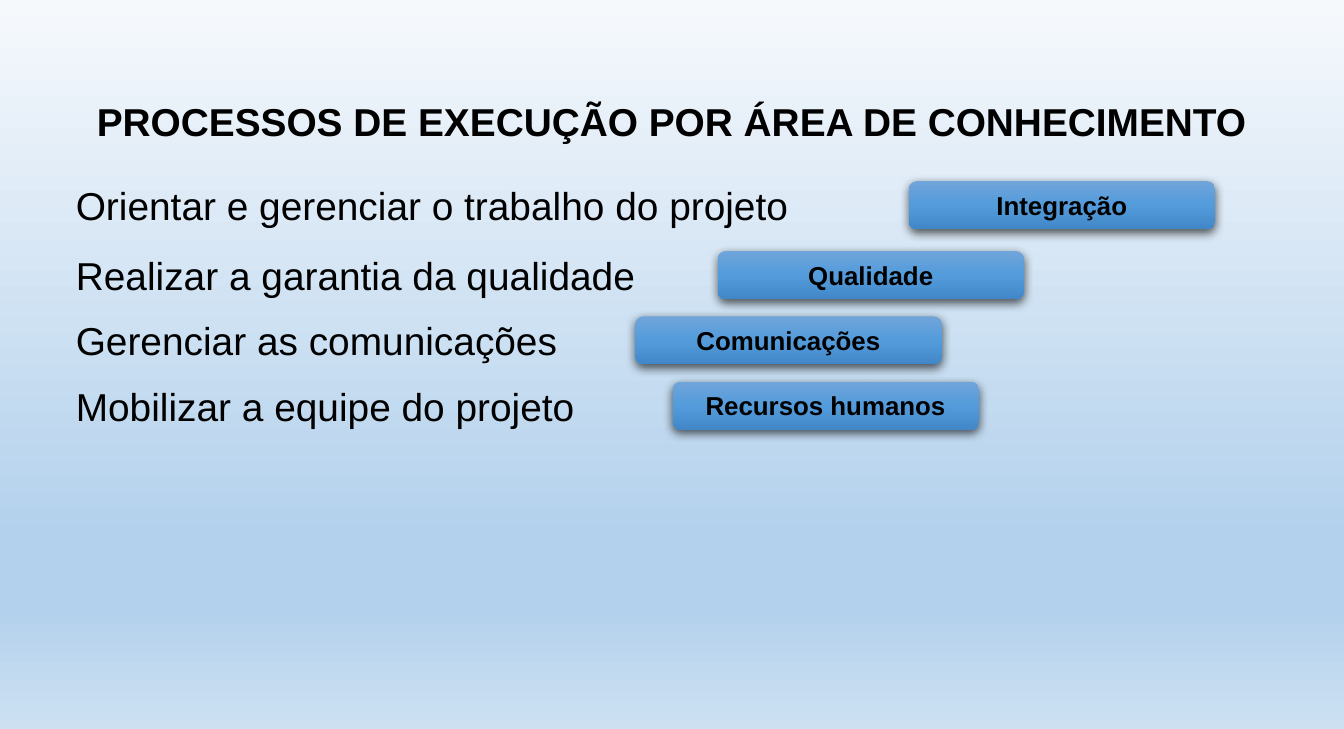
from lxml import etree
from pptx import Presentation
from pptx.dml.color import RGBColor
from pptx.enum.shapes import MSO_SHAPE
from pptx.enum.text import MSO_ANCHOR, PP_ALIGN
from pptx.oxml.ns import qn
from pptx.util import Inches, Pt

# Content
TITLE = "PROCESSOS DE EXECUÇÃO POR ÁREA DE CONHECIMENTO"
ROWS = [  # process, area, row top, tag left
    ("Orientar e gerenciar o trabalho do projeto", "Integração", 1.12, 5.85),
    ("Realizar a garantia da qualidade", "Qualidade", 1.57, 4.62),
    ("Gerenciar as comunicações", "Comunicações", 1.99, 4.09),
    ("Mobilizar a equipe do projeto", "Recursos humanos", 2.41, 4.33),
]

# Style
FONT = "Arial"
BLACK = RGBColor(0, 0, 0)
SKY = [
    (0, RGBColor(0xF6, 0xF9, 0xFC)),
    (74, RGBColor(0xB3, 0xD1, 0xEC)),
    (83, RGBColor(0xB3, 0xD1, 0xEC)),
    (100, RGBColor(0xCC, 0xE0, 0xF2)),
]
BLUE = [
    (0, RGBColor(0x70, 0xA5, 0xDA)),
    (50, RGBColor(0x53, 0x9B, 0xDB)),
    (100, RGBColor(0x42, 0x88, 0xC8)),
]
LEFT, WIDTH, HEIGHT = 0.39, 7.87, 0.4
TAG_W, TAG_H = 1.97, 0.31
TAG_DROP = (HEIGHT - TAG_H) / 2
LEFT_AL, CENTER = PP_ALIGN.LEFT, PP_ALIGN.CENTER
MIDDLE = MSO_ANCHOR.MIDDLE
ROUND = MSO_SHAPE.ROUNDED_RECTANGLE


def add_color(parent, color):
    return etree.SubElement(parent, qn("a:srgbClr"), val=str(color))


def shade(fill, root, stops):
    """Fill from top to bottom with any number of stops."""
    fill.gradient()
    fill.gradient_angle = 270
    group = root.find(".//" + qn("a:gsLst"))
    for old in list(group):
        group.remove(old)
    for pos, color in stops:
        add_color(etree.SubElement(group, qn("a:gs"), pos=str(pos * 1000)), color)


def drop_shadow(shape):
    shape.shadow.inherit = False
    effects = shape._element.spPr.find(qn("a:effectLst"))
    outer = etree.SubElement(
        effects, qn("a:outerShdw"), blurRad=str(Pt(4.5)), dist=str(Pt(1.5)),
        dir="5400000", algn="ctr", rotWithShape="0")
    etree.SubElement(add_color(outer, BLACK), qn("a:alpha"), val="63000")


def write(shape, text, size, bold, align):
    frame = shape.text_frame
    frame.word_wrap = True
    para = frame.paragraphs[0]
    para.text = text
    para.alignment = align
    font = para.font
    font.name, font.size, font.bold = FONT, Pt(size), bold
    font.color.rgb = BLACK


def add_line(slide, text, top, bold=False, align=LEFT_AL):
    box = slide.shapes.add_textbox(
        Inches(LEFT), Inches(top), Inches(WIDTH), Inches(HEIGHT))
    write(box, text, 18, bold, align)


def add_tag(slide, text, left, top):
    tag = slide.shapes.add_shape(
        ROUND, Inches(left), Inches(top), Inches(TAG_W), Inches(TAG_H))
    shade(tag.fill, tag._element, BLUE)
    tag.line.fill.background()
    drop_shadow(tag)
    write(tag, text, 12, True, CENTER)
    tag.text_frame.vertical_anchor = MIDDLE


def main():
    deck = Presentation()
    deck.slide_width, deck.slide_height = Inches(8.65), Inches(4.69)
    slide = deck.slides.add_slide(deck.slide_layouts[6])
    shade(slide.background.fill, slide._element, SKY)

    # Title
    add_line(slide, TITLE, 0.58, True, CENTER)

    # Processes with their knowledge areas
    for process, area, top, left in ROWS:
        add_line(slide, process, top)
        add_tag(slide, area, left, top + TAG_DROP)

    deck.save("out.pptx")


if __name__ == "__main__":
    main()
